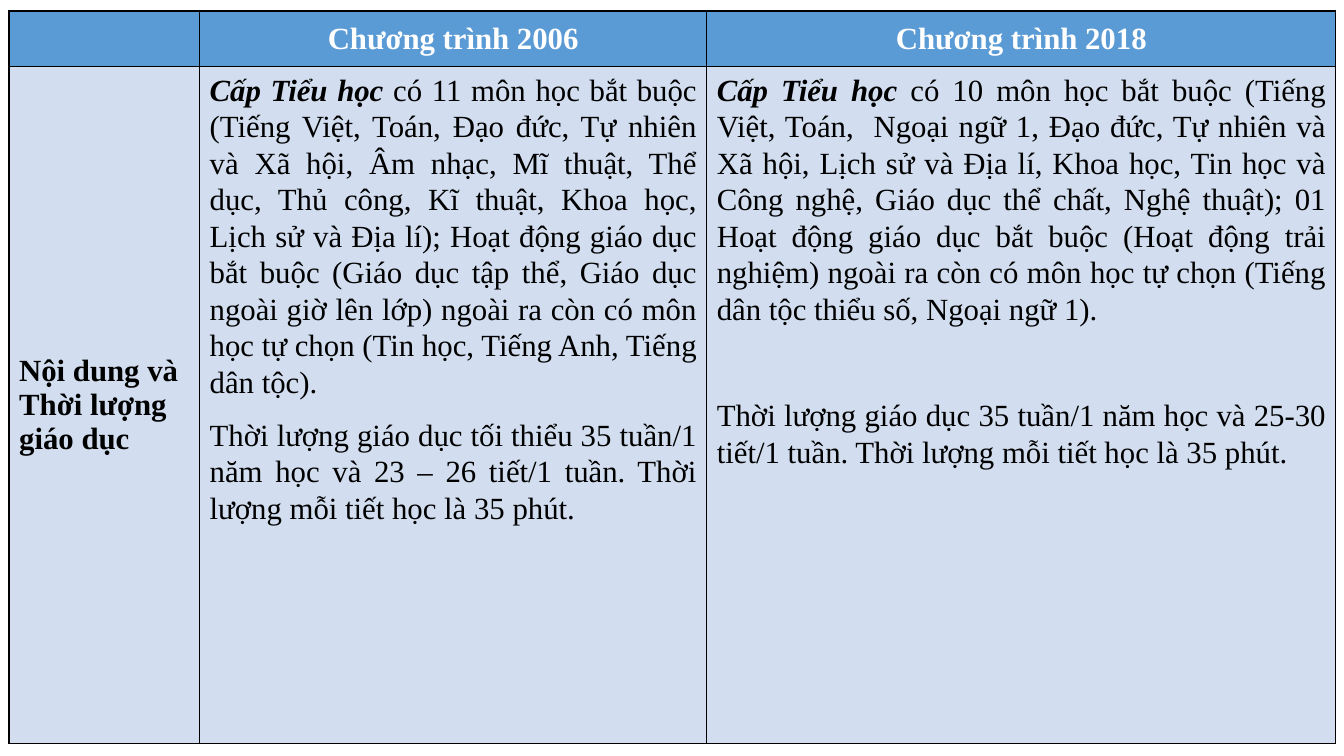
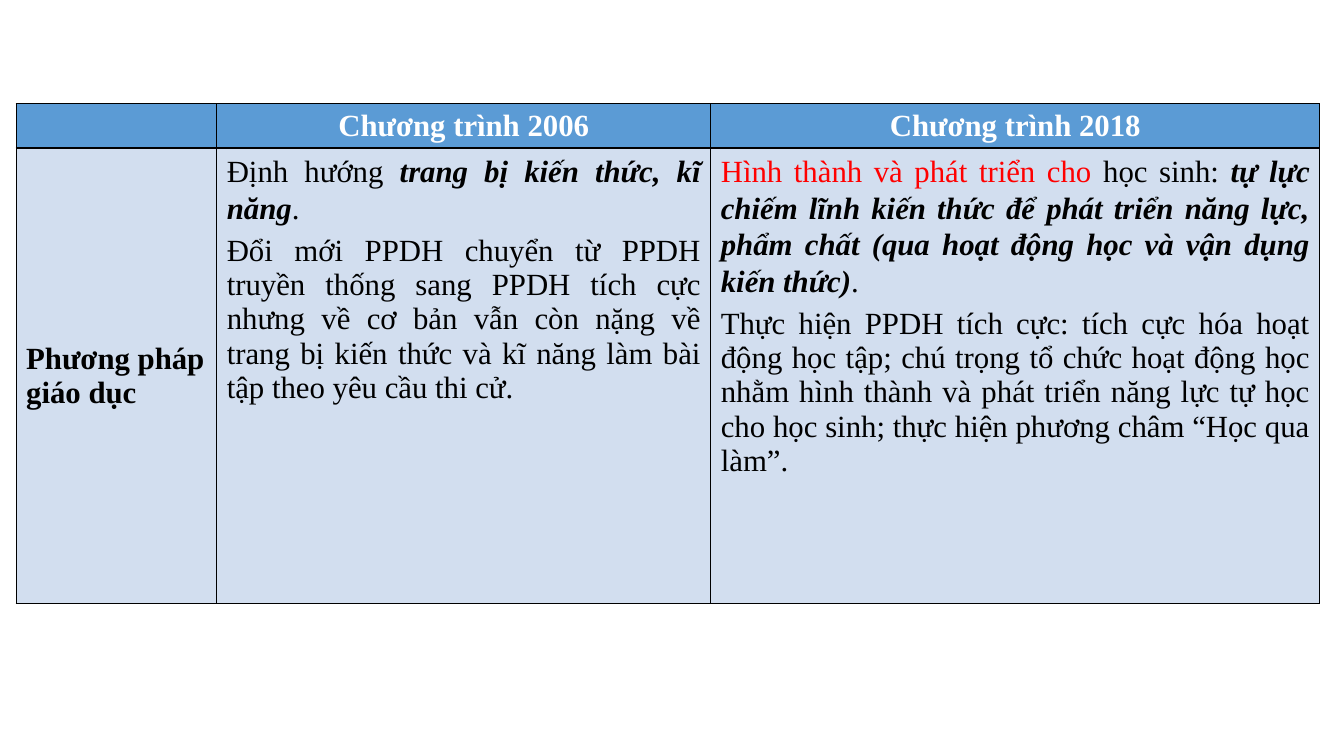
from lxml import etree
from pptx import Presentation
from pptx import util as u
from pptx.dml.color import RGBColor
from pptx.enum import text
from pptx.oxml.ns import qn

FONT, SIZE = "Times New Roman", u.Pt(22)
BLUE, PALE, BLACK, WHITE, RED = "5B9BD5", "D2DEEF", "000000", "FFFFFF", "FF0000"
HEADINGS = ["", "Chương trình 2006", "Chương trình 2018"]

# Paragraph spacing: line spacing, points before, points after
LOOSE, TIGHT, APART = (1.07, 6, 6), (1, 0, 0), (1.07, 44, 6)

# Run styles: colour, bold, italic
PLAIN, STRONG = (BLACK, False, False), (BLACK, True, True)
HEADING, LABEL, ACCENT = (WHITE, True, False), (BLACK, True, False), (RED, False, False)

# One entry per slide; a cell is a list of (spacing, runs)
pages = [
    {
        "at": (0.09, 0.11), "columns": (1.89, 5.03, 6.24), "rows": (0.55, 6.72),
        "label": "Nội dung và Thời lượng giáo dục",
        "cells": [
            [(LOOSE, [("Cấp Tiểu học ", STRONG),
                      ("có 11 môn học bắt buộc (Tiếng Việt, Toán, Đạo đức, Tự nhiên và Xã hội, "
                       "Âm nhạc, Mĩ thuật, Thể dục, Thủ công, Kĩ thuật, Khoa học, Lịch sử và "
                       "Địa lí); Hoạt động giáo dục bắt buộc (Giáo dục tập thể, Giáo dục ngoài "
                       "giờ lên lớp) ngoài ra còn có môn học tự chọn (Tin học, Tiếng Anh, "
                       "Tiếng dân tộc).", PLAIN)]),
             (LOOSE, [("Thời lượng giáo dục tối thiểu 35 tuần/1 năm học và 23 – 26 tiết/1 tuần. "
                       "Thời lượng mỗi tiết học là 35 phút.", PLAIN)])],
            [(LOOSE, [("Cấp Tiểu học ", STRONG),
                      ("có 10 môn học bắt buộc (Tiếng Việt, Toán,  Ngoại ngữ 1, Đạo đức, Tự nhiên "
                       "và Xã hội, Lịch sử và Địa lí, Khoa học, Tin học và Công nghệ, Giáo dục "
                       "thể chất, Nghệ thuật); 01 Hoạt động giáo dục bắt buộc (Hoạt động trải "
                       "nghiệm) ngoài ra còn có môn học tự chọn (Tiếng dân tộc thiểu số, "
                       "Ngoại ngữ 1).", PLAIN)]),
             (APART, [("Thời lượng giáo dục 35 tuần/1 năm học và 25-30 tiết/1 tuần. "
                       "Thời lượng mỗi tiết học là 35 phút.", PLAIN)])],
        ],
    },
    {
        "at": (0.16, 1.03), "columns": (1.99, 4.9, 6.04), "rows": (0.37, 4.52),
        "label": "Phương pháp giáo dục",
        "cells": [
            [(LOOSE, [("Định hướng ", PLAIN), ("trang bị kiến thức, kĩ năng", STRONG),
                      (".", PLAIN)]),
             (TIGHT, [("Đổi mới PPDH chuyển từ PPDH truyền thống sang PPDH tích cực nhưng về cơ "
                       "bản vẫn còn nặng về trang bị kiến thức và kĩ năng làm bài tập theo yêu "
                       "cầu thi cử.", PLAIN)])],
            [(LOOSE, [("Hình thành và phát triển cho ", ACCENT), ("học sinh: ", PLAIN),
                      ("tự lực chiếm lĩnh kiến thức để phát triển năng lực, phẩm chất (qua hoạt "
                       "động học và vận dụng kiến thức)", STRONG), (".", PLAIN)]),
             (TIGHT, [("Thực hiện PPDH tích cực: tích cực hóa hoạt động học tập; chú trọng tổ "
                       "chức hoạt động học nhằm hình thành và phát triển năng lực tự học cho học "
                       "sinh; thực hiện phương châm “Học qua làm”.", PLAIN)])],
        ],
    },
]


def color(value):
    return RGBColor.from_string(value)


def fill_cell(cell, fill, paragraphs, align, anchor):
    """Set a cell's fill, black borders and formatted paragraphs."""
    cell.fill.solid()
    cell.fill.fore_color.rgb = color(fill)
    cell.vertical_anchor = anchor
    properties = cell._tc.get_or_add_tcPr()
    for index, side in enumerate(("a:lnL", "a:lnR", "a:lnT", "a:lnB")):
        line = etree.Element(qn(side), w=str(u.Pt(1)))
        solid = etree.SubElement(line, qn("a:solidFill"))
        etree.SubElement(solid, qn("a:srgbClr"), val=BLACK)
        properties.insert(index, line)
    frame = cell.text_frame
    for index, (spacing, runs) in enumerate(paragraphs):
        para = frame.add_paragraph() if index else frame.paragraphs[0]
        para.alignment = align
        para.line_spacing = float(spacing[0])
        para.space_before, para.space_after = u.Pt(spacing[1]), u.Pt(spacing[2])
        for words, (ink, bold, italic) in runs:
            span = para.add_run()
            span.text = words
            span.font.name, span.font.size = FONT, SIZE
            span.font.bold, span.font.italic = bold, italic
            span.font.color.rgb = color(ink)


deck = Presentation()
deck.slide_width, deck.slide_height = u.Inches(13.33), u.Inches(7.5)
blank = deck.slide_layouts[6]

for content in pages:
    page = deck.slides.add_slide(blank)

    # Table grid
    left, top = content["at"]
    box = page.shapes.add_table(
        2, 3, u.Inches(left), u.Inches(top),
        u.Inches(sum(content["columns"])), u.Inches(sum(content["rows"])))
    table = box.table
    for column, width in zip(table.columns, content["columns"]):
        column.width = u.Inches(width)
    for row, height in zip(table.rows, content["rows"]):
        row.height = u.Inches(height)

    # Header row
    for index, heading in enumerate(HEADINGS):
        paragraphs = [(TIGHT, [(heading, HEADING)])] if heading else []
        fill_cell(table.cell(0, index), BLUE, paragraphs,
                  text.PP_ALIGN.CENTER, text.MSO_ANCHOR.MIDDLE)

    # Row label and the two programmes compared
    fill_cell(table.cell(1, 0), PALE, [(TIGHT, [(content["label"], LABEL)])],
              text.PP_ALIGN.LEFT, text.MSO_ANCHOR.MIDDLE)
    for index, paragraphs in enumerate(content["cells"], start=1):
        fill_cell(table.cell(1, index), PALE, paragraphs,
                  text.PP_ALIGN.JUSTIFY, text.MSO_ANCHOR.TOP)

deck.save("out.pptx")
